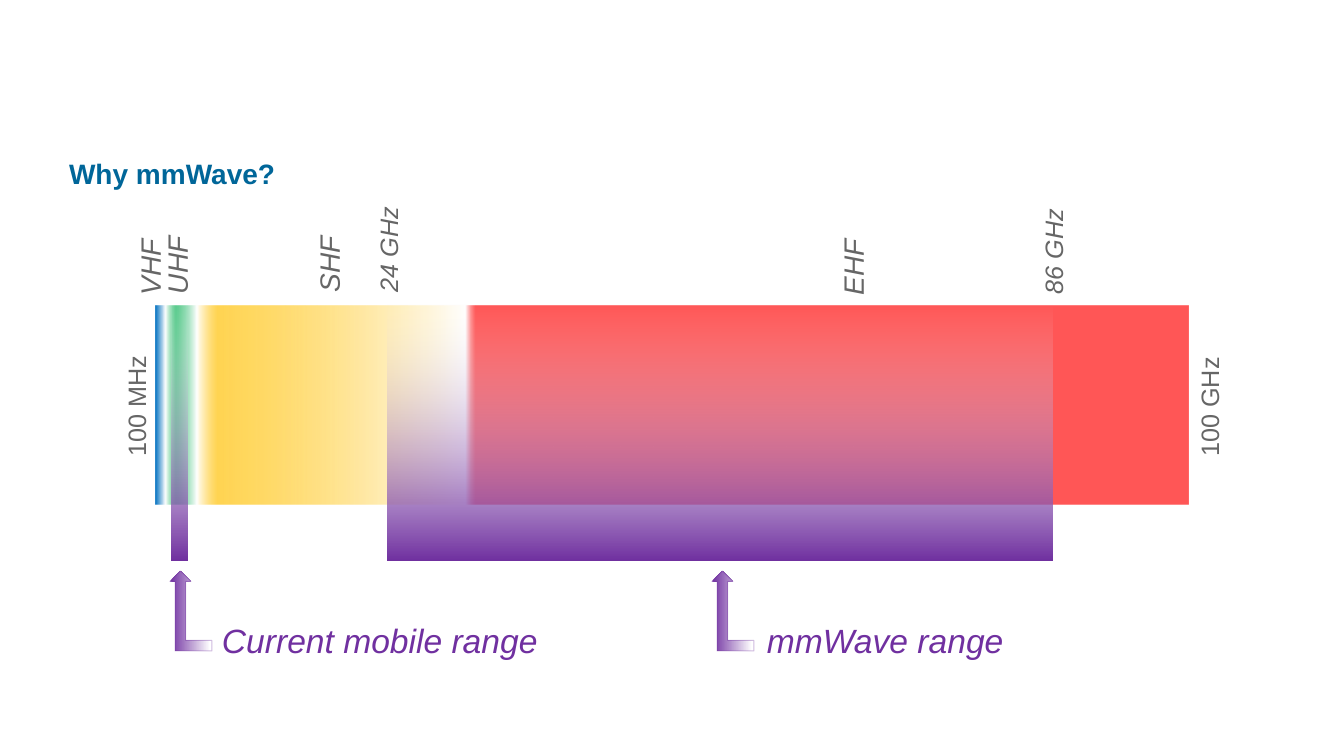
import pptx
import pptx.dml.color
import pptx.enum.shapes
import pptx.enum.text
import pptx.oxml
import pptx.oxml.ns
import pptx.util
from lxml import etree

PX = 914400 / 100.8
FONT = "Arial"
COLORS = {
    "title": "006699", "label": "666666", "range": "7030A0", "clear": "F7F7F7",
    "white": "FFFFFF", "ehf": "FF0000", "shf": "FFC000", "uhf": "00B050", "vhf": "0070C0",
}
# Gradient stops: position %, colour, opacity %
BAND_STOPS = [(69, "ehf", 66), (70, "white", 100), (94, "shf", 67), (96, "white", 100),
              (98, "uhf", 64), (99, "white", 100), (100, "vhf", 100)]
RANGE_STOPS = [(0, "clear", 0), (100, "range", 100)]
ARROW_STOPS = [(0, "range", 100), (96, "white", 100), (97, "white", 100)]
# Labels above the band: text, centre from band left, gap to band top, length, points
BAND_LABELS = [
    ("VHF", -6, 1, 77, 20), ("UHF", 21, 2, 79, 20), ("SHF", 173, 4, 77, 20),
    ("EHF", 697, 1, 77, 20), ("24 GHz", 232, 4, 107, 18), ("86 GHz", 897, 2, 107, 18),
]


def px(length):
    return pptx.util.Emu(round(length * PX))


def add_run(paragraph, text, size, color, bold=False, italic=False):
    run = paragraph.add_run()
    run.text = text
    run.font.name = FONT
    run.font.size = pptx.util.Pt(size)
    run.font.bold = bold
    run.font.italic = italic
    run.font.color.rgb = pptx.dml.color.RGBColor.from_string(COLORS[color])


def add_text(slide, box, text, size, color, italic=True, wrap=True):
    textbox = slide.shapes.add_textbox(*map(px, box))
    frame = textbox.text_frame
    frame.word_wrap = wrap
    frame.auto_size = pptx.enum.text.MSO_AUTO_SIZE.SHAPE_TO_FIT_TEXT
    add_run(frame.paragraphs[0], text, size, color, italic=italic)
    return textbox


def add_upright_label(slide, center_x, center_y, length, text, size, italic=True):
    height = 44 if size == 20 else 40
    box = (center_x - length / 2, center_y - height / 2, length, height)
    add_text(slide, box, text, size, "label", italic, wrap=False).rotation = 270


def add_gradient_shape(slide, kind, box, stops, angle):
    shape = slide.shapes.add_shape(kind, *map(px, box))
    shape.shadow.inherit = False
    shape.line.fill.background()
    stop_xml = "".join(
        f'<a:gs pos="{position * 1000}"><a:srgbClr val="{COLORS[color]}">'
        f'<a:alpha val="{opacity * 1000}"/></a:srgbClr></a:gs>'
        for position, color, opacity in stops)
    gradient = pptx.oxml.parse_xml(
        f'<a:gradFill {pptx.oxml.ns.nsdecls("a")} rotWithShape="1"><a:gsLst>{stop_xml}</a:gsLst>'
        f'<a:lin ang="{angle * 60000}" scaled="0"/></a:gradFill>')
    shape.element.spPr.find(pptx.oxml.ns.qn("a:prstGeom")).addnext(gradient)
    return shape


def add_title(slide, left, top, width, height):
    title = slide.shapes.title
    title.left, title.top, title.width, title.height = map(px, (left, top, width, height))
    frame = title.text_frame
    frame.margin_left = frame.margin_right = frame.margin_top = frame.margin_bottom = 0
    frame.vertical_anchor = pptx.enum.text.MSO_ANCHOR.TOP
    frame.auto_size = pptx.enum.text.MSO_AUTO_SIZE.NONE
    frame.paragraphs[0].alignment = pptx.enum.text.PP_ALIGN.LEFT
    add_run(frame.paragraphs[0], "Why mmWave?", 20, "title", bold=True)


def add_spectrum(slide, left, top, width, height):
    rectangle = pptx.enum.shapes.MSO_SHAPE.RECTANGLE
    add_gradient_shape(slide, rectangle, (left, top, width, height), BAND_STOPS, 180)
    # Band names and limits
    for text, offset, gap, length, size in BAND_LABELS:
        add_upright_label(slide, left + offset, top - gap - length / 2, length, text, size)
    # Ends of the scale
    for text, center_x in (("100 MHz", left - 20), ("100 GHz", left + width + 21)):
        add_upright_label(slide, center_x, top + height / 2, 122, text, 18, italic=False)


def add_range(slide, left, top, width, height, arrow_offset, caption, caption_gap, caption_width):
    shapes = pptx.enum.shapes.MSO_SHAPE
    add_gradient_shape(slide, shapes.RECTANGLE, (left, top, width, height), RANGE_STOPS, 90)
    # Arrow pointing up at the range
    arrow_left, arrow_top = left + arrow_offset, top + height + 10
    arrow = add_gradient_shape(slide, shapes.BENT_UP_ARROW,
                               (arrow_left, arrow_top, 42, 80), ARROW_STOPS, 180)
    arrow.element.spPr.find(pptx.oxml.ns.qn("a:xfrm")).set("flipH", "1")
    arrow.line.color.rgb = pptx.dml.color.RGBColor.from_string(COLORS["range"])
    arrow.line.width = pptx.util.Pt(0.75)
    line_color = next(arrow.line._ln.iter(pptx.oxml.ns.qn("a:srgbClr")))
    etree.SubElement(line_color, pptx.oxml.ns.qn("a:alpha")).set("val", "32000")
    # Caption beside the arrow
    caption_box = (arrow_left + 42 + caption_gap, arrow_top + 44, caption_width, 50)
    add_text(slide, caption_box, caption, 24, "range")


def main():
    presentation = pptx.Presentation()
    presentation.slide_width, presentation.slide_height = px(1344), px(756)
    slide = presentation.slides.add_slide(presentation.slide_layouts[5])
    add_title(slide, 69, 156, 1142, 50)
    add_spectrum(slide, 156, 306, 1032, 199)
    add_range(slide, 172, 305, 16, 256, -2, "Current mobile range", 0, 385)
    add_range(slide, 388, 304, 665, 257, 324, "mmWave range", 3, 532)
    presentation.save("out.pptx")


if __name__ == "__main__":
    main()
